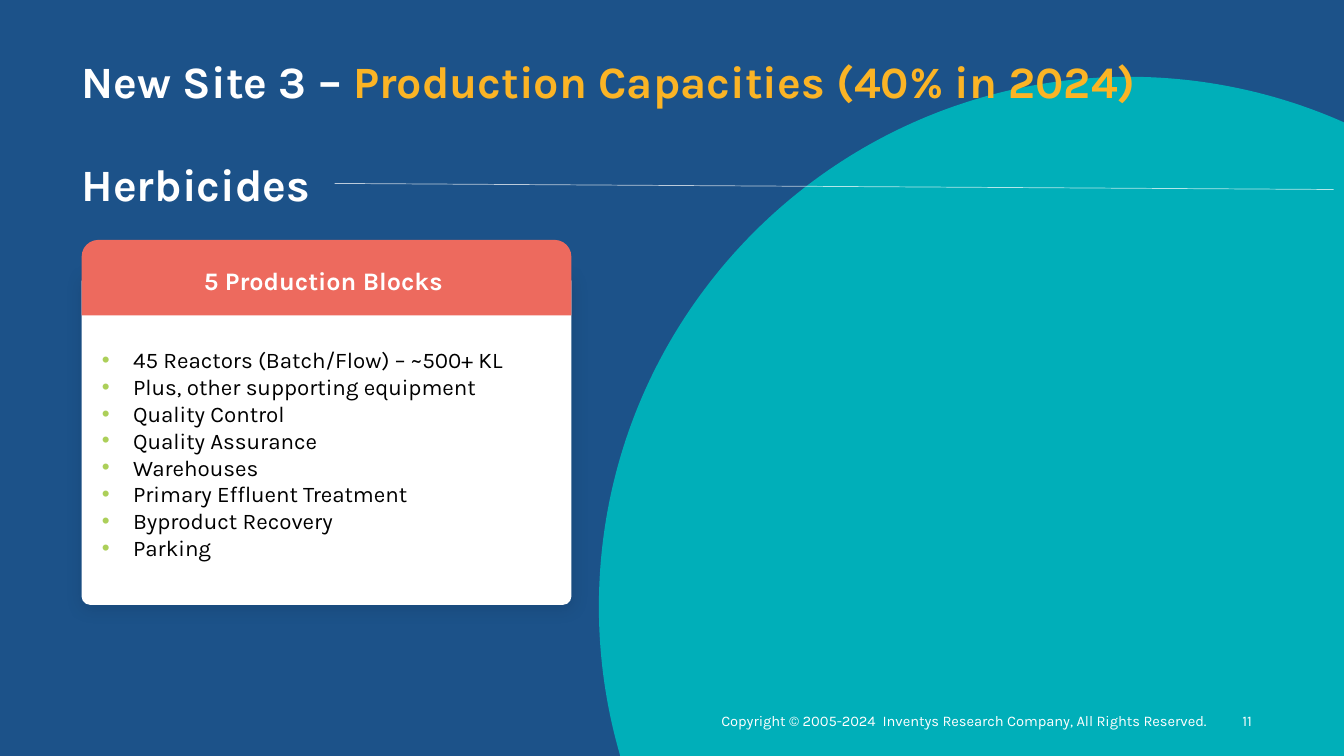
from math import acos, asin, cos, pi, sin, tan

from lxml.etree import SubElement
from pptx import Presentation
from pptx.dml.color import RGBColor
from pptx.enum.shapes import MSO_CONNECTOR, MSO_SHAPE as SHAPE
from pptx.enum.text import MSO_ANCHOR as ANCHOR, PP_ALIGN as ALIGN
from pptx.oxml.ns import qn
from pptx.util import Inches, Pt

NAVY = RGBColor(0x1C, 0x52, 0x89)
TEAL = RGBColor(0x00, 0xAF, 0xB9)
CORAL = RGBColor(0xED, 0x6A, 0x5E)
AMBER = RGBColor(0xFB, 0xB4, 0x25)
LIME = RGBColor(0xAC, 0xCF, 0x59)
WHITE = RGBColor(0xFF, 0xFF, 0xFF)
BLACK = RGBColor(0x00, 0x00, 0x00)

COLUMNS, ROWS = 160, 90
MARGIN = 9.72
CARD_WIDTH = 58.3
FOOTER_TOP, FOOTER_HEIGHT = 83.4, 4.8

FACILITIES = [
    "45 Reactors (Batch/Flow) – ~500+ KL",
    "Plus, other supporting equipment",
    "Quality Control",
    "Quality Assurance",
    "Warehouses",
    "Primary Effluent Treatment",
    "Byproduct Recovery",
    "Parking",
]


class SlideBuilder:
    font_name = "Karla"

    def __init__(self, deck, background):
        self.column = deck.slide_width / COLUMNS
        self.row = deck.slide_height / ROWS
        self.slide = deck.slides.add_slide(deck.slide_layouts[6])
        self.shapes = self.slide.shapes
        fill = self.slide.background.fill
        fill.solid()
        fill.fore_color.rgb = background

    def cells(self, *lengths):
        return [round(length * (self.row if i % 2 else self.column))
                for i, length in enumerate(lengths)]

    def paint(self, shape, color):
        shape.fill.solid()
        shape.fill.fore_color.rgb = color
        shape.line.fill.background()
        shape.shadow.inherit = False

    def style(self, paragraph, size, color, bold):
        font = paragraph.font
        font.name, font.size, font.bold = self.font_name, Pt(size), bold
        if color is not None:
            font.color.rgb = color

    def clipped_circle(self, x, y, radius, color):
        def on_circle(angle, lean=0.0):
            return self.cells(x + radius * (cos(angle) - lean * sin(angle)),
                              y - radius * (sin(angle) + lean * cos(angle)))

        angles = [acos((COLUMNS - x) / radius), pi / 2, pi,
                  pi + asin((ROWS - y) / radius)]
        arc = [on_circle(angle) for angle in angles]
        outline = self.shapes.build_freeform(*arc[0])
        outline.add_line_segments(arc[1:] + [self.cells(COLUMNS, ROWS)])
        circle = outline.convert_to_shape()
        self.paint(circle, color)

        sides = list(circle._element.iter(qn("a:lnTo")))
        for side, begin, end in zip(sides, angles, angles[1:]):
            lean = 4 / 3 * tan((end - begin) / 4)
            side.tag = qn("a:cubicBezTo")
            handles = [on_circle(begin, lean), on_circle(end, -lean)]
            for i, (left, top) in enumerate(handles):
                handle = SubElement(side, qn("a:pt"), x=str(left - circle.left),
                                    y=str(top - circle.top))
                side.insert(i, handle)

    def panel(self, kind, box, color, corners):
        panel = self.shapes.add_shape(kind, *self.cells(*box))
        for i, corner in enumerate(corners):
            panel.adjustments[i] = corner
        self.paint(panel, color)
        return panel

    def soft_shadow(self, shape, blur, distance, alpha):
        effects = shape.fill._xPr.find(qn("a:effectLst"))
        shadow = SubElement(effects, qn("a:outerShdw"), blurRad=str(Pt(blur)),
                            dist=str(Pt(distance)), dir="5400000",
                            algn="t", rotWithShape="0")
        tint = SubElement(shadow, qn("a:srgbClr"), val=str(BLACK))
        SubElement(tint, qn("a:alpha"), val=str(alpha * 1000))

    def label(self, shape, words, size, color):
        shape.text_frame.vertical_anchor = ANCHOR.MIDDLE
        paragraph = shape.text_frame.paragraphs[0]
        paragraph.text = words
        paragraph.alignment = ALIGN.CENTER
        self.style(paragraph, size, color, True)

    def text_frame(self, box, anchor=ANCHOR.TOP):
        frame = self.shapes.add_textbox(*self.cells(*box)).text_frame
        frame.word_wrap = True
        frame.vertical_anchor = anchor
        frame.margin_left = frame.margin_right = 0
        frame.margin_top = frame.margin_bottom = 0
        return frame

    def heading(self, box, parts, size, spacing=1.0):
        paragraph = self.text_frame(box).paragraphs[0]
        paragraph.line_spacing = spacing
        self.style(paragraph, size, None, True)
        for words, color in parts:
            run = paragraph.add_run()
            run.text = words
            run.font.color.rgb = color

    def footer(self, box, words):
        paragraph = self.text_frame(box, ANCHOR.MIDDLE).paragraphs[0]
        paragraph.text = words
        paragraph.alignment = ALIGN.RIGHT
        self.style(paragraph, 10.5, WHITE, False)

    def bullets(self, box, items, size, color, bullet_color):
        frame = self.text_frame(box)
        for i, item in enumerate(items):
            paragraph = frame.add_paragraph() if i else frame.paragraphs[0]
            paragraph.text = item
            props = paragraph._p.get_or_add_pPr()
            props.set("marL", str(Inches(0.31)))
            props.set("indent", str(-Inches(0.31)))
            SubElement(SubElement(props, qn("a:buClr")), qn("a:srgbClr"),
                       val=str(bullet_color))
            SubElement(props, qn("a:buFont"), typeface="Arial")
            SubElement(props, qn("a:buChar"), char="•")
            self.style(paragraph, size, color, False)

    def rule(self, ends, color, width, alpha):
        rule = self.shapes.add_connector(MSO_CONNECTOR.STRAIGHT, *self.cells(*ends))
        rule.line.width = Pt(width)
        rule.line.color.rgb = color
        props = rule.line._get_or_add_ln().getparent()
        tint = next(props.iter(qn("a:srgbClr")))
        SubElement(tint, qn("a:alpha"), val=str(alpha * 1000))
        SubElement(props, qn("a:effectLst"))


def main():
    deck = Presentation()
    deck.slide_width, deck.slide_height = Inches(13.33), Inches(7.5)
    page = SlideBuilder(deck, NAVY)

    page.clipped_circle(134.4, 72.24, 63.1, TEAL)
    page.heading((MARGIN, 7.08, 138, 5.76),
                 [("New Site 3 – ", WHITE),
                  ("Production Capacities (40% in 2024)", AMBER)], 32, 0.9)
    page.footer((145.32, FOOTER_TOP, 3.72, FOOTER_HEIGHT), "11")

    card = page.panel(SHAPE.ROUNDED_RECTANGLE, (MARGIN, 32.52, CARD_WIDTH, 39.48),
                      WHITE, [0.025])
    page.soft_shadow(card, 12, 3, 11)
    page.bullets((12.12, 41.22, 57.96, 25.8), FACILITIES, 16, BLACK, LIME)
    card_header = page.panel(SHAPE.ROUND_2_SAME_RECTANGLE,
                             (MARGIN, 28.56, CARD_WIDTH, 9), CORAL, [0.22, 0])
    page.label(card_header, "5 Production Blocks ", 18, WHITE)

    page.heading((MARGIN, 18.6, 30.12, 6.48), [("Herbicides", WHITE)], 32)
    page.rule((39.84, 21.84, 158.76, 22.56), WHITE, 0.5, 70)
    page.footer((83.52, FOOTER_TOP, 60.6, FOOTER_HEIGHT),
                "Copyright © 2005-2024  Inventys Research Company, All Rights Reserved. ")

    deck.save("out.pptx")


if __name__ == "__main__":
    main()
